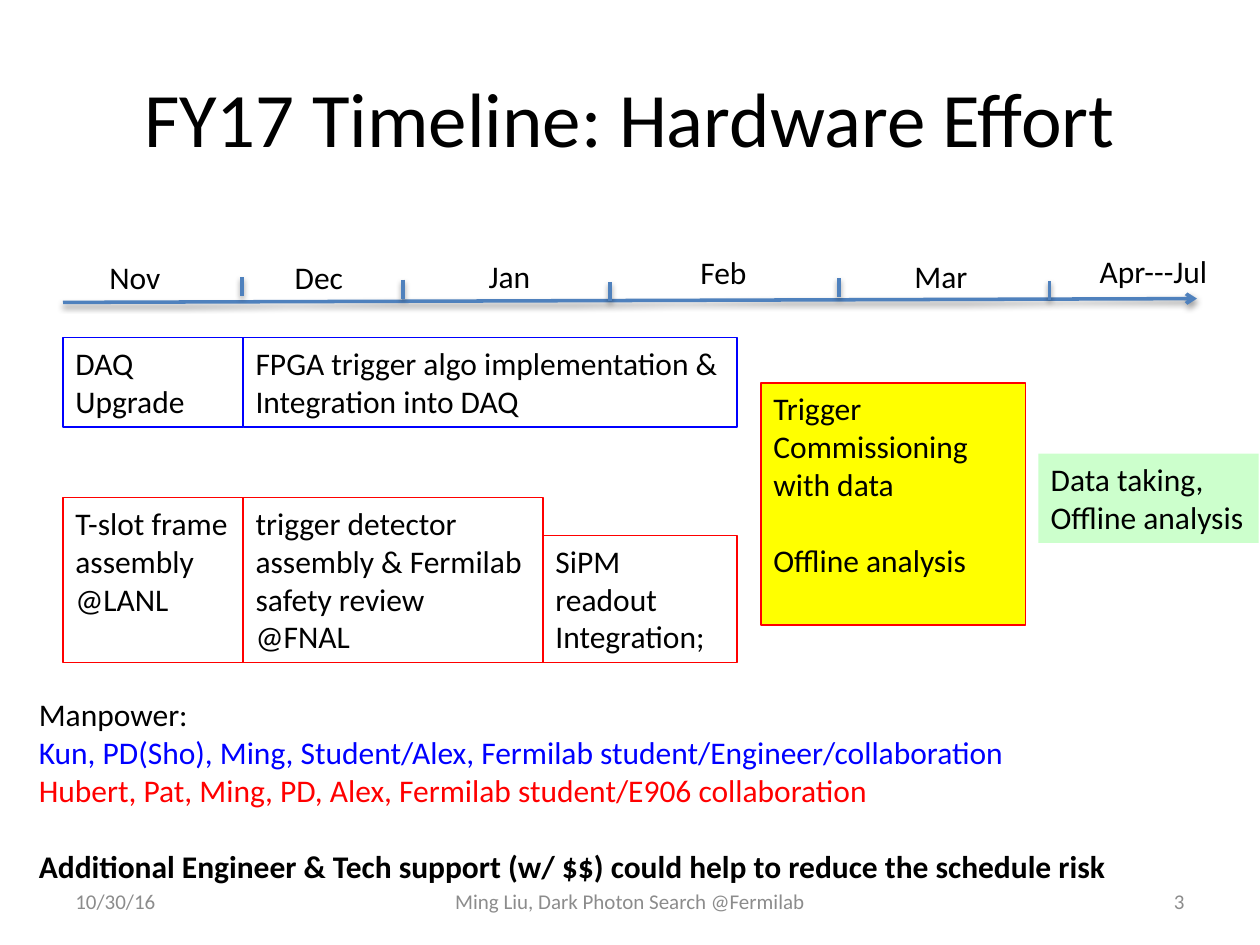
from lxml import etree
from pptx import Presentation
from pptx.dml.color import RGBColor
from pptx.enum.shapes import MSO_CONNECTOR as Link, MSO_SHAPE as Shape
from pptx.enum.text import MSO_ANCHOR as Anchor, PP_ALIGN as Align
from pptx.oxml import parse_xml
from pptx.oxml.ns import nsdecls, qn
from pptx.util import Inches, Pt

BLACK = RGBColor(0x00, 0x00, 0x00)
BLUE = RGBColor(0x00, 0x00, 0xFF)
RED = RGBColor(0xFF, 0x00, 0x00)
YELLOW = RGBColor(0xFF, 0xFF, 0x00)
GREEN = RGBColor(0xCC, 0xFF, 0xCC)
STEEL = RGBColor(0x4F, 0x81, 0xBD)
GREY = RGBColor(0x8C, 0x8C, 0x8C)
FONT = "Calibri"
GAP = Pt(22)  # one line of body text

SHADOW = (
    f'<a:effectLst {nsdecls("a")}>'
    '<a:outerShdw blurRad="40000" dist="20000" dir="5400000" rotWithShape="0">'
    '<a:srgbClr val="000000"><a:alpha val="38000"/></a:srgbClr>'
    '</a:outerShdw></a:effectLst>'
)


def write(shape, lines, size=18, color=BLACK, align=Align.LEFT,
          anchor=Anchor.TOP, wrap=True):
    """Fill a shape with lines: plain text, or (text, options) pairs."""
    frame = shape.text_frame
    frame.word_wrap = wrap
    frame.vertical_anchor = anchor
    for i, line in enumerate(lines):
        text, opts = (line, {}) if isinstance(line, str) else line
        para = frame.paragraphs[0] if i == 0 else frame.add_paragraph()
        para.alignment = align
        para.space_before = opts.get("gap", Pt(0))
        run = para.add_run()
        run.text = text
        font = run.font
        font.name, font.size = FONT, Pt(size)
        font.bold = opts.get("bold", False)
        font.color.rgb = opts.get("color", color)


def add_text(slide, box, lines, **style):
    label = slide.shapes.add_textbox(*map(Inches, box))
    write(label, lines, **style)


def add_task(slide, box, lines, fill=None, edge=None, wrap=True):
    task = slide.shapes.add_shape(Shape.RECTANGLE, *map(Inches, box))
    task.shadow.inherit = False
    if fill is None:
        task.fill.background()
    else:
        task.fill.solid()
        task.fill.fore_color.rgb = fill
    if edge is None:
        task.line.fill.background()
    else:
        task.line.color.rgb = edge
        task.line.width = Pt(0.75)
    write(task, lines, wrap=wrap)


def add_line(slide, start, end, arrow=False):
    line = slide.shapes.add_connector(
        Link.STRAIGHT, *map(Inches, (*start, *end)))
    line.line.color.rgb = STEEL
    line.line.width = Pt(2)
    if arrow:
        etree.SubElement(line.line._get_or_add_ln(), qn("a:tailEnd"), type="arrow")
    line._element.spPr.append(parse_xml(SHADOW))


def add_axis(slide, box):
    """Draw the month axis with its ticks and labels."""
    left, top, width, height = box
    add_line(slide, (left, top + height), (left + width, top + height - 0.03),
             arrow=True)
    months = [("Nov", 0.27, 0.05, 0.61), ("Dec", 1.74, 0.05, 0.59),
              ("Jan", 3.28, 0.04, 0.54), ("Feb", 4.96, 0.01, 0.58),
              ("Mar", 6.66, 0.04, 0.63), ("Apr---Jul", 8.13, 0, 1.07)]
    for name, x, y, wide in months:
        add_text(slide, (left + x, top + y, wide, 0.4), [name], wrap=False)
    ticks = [(1.42, 0.25), (2.7, 0.27), (4.34, 0.29), (6.16, 0.26), (7.83, 0.28)]
    for x, y in ticks:
        add_line(slide, (left + x, top + y), (left + x, top + y + 0.15))


def add_track(slide, box, edge, tasks):
    """Set tasks (width, height, lines) side by side on a common bottom."""
    left, top, height = box
    for wide, tall, lines in tasks:
        add_task(slide, (left, top + height - tall, wide, tall), lines, edge=edge)
        left += wide


def add_footer(slide, box):
    left, top, width, height = box
    side, mid = 2.33, 3.17
    parts = [("10/30/16", 0, side, Align.LEFT),
             ("Ming Liu, Dark Photon Search @Fermilab", (width - mid) / 2, mid,
              Align.CENTER),
             ("3", width - side, side, Align.RIGHT)]
    for text, x, wide, align in parts:
        add_text(slide, (left + x, top, wide, height), [text], size=12,
                 color=GREY, align=align, anchor=Anchor.MIDDLE)


def main():
    deck = Presentation()
    deck.slide_width, deck.slide_height = Inches(10), Inches(7.5)
    slide = deck.slides.add_slide(deck.slide_layouts[6])

    add_text(slide, (0.5, 0.3, 9, 1.25), ["FY17 Timeline: Hardware Effort"],
             size=44, align=Align.CENTER, anchor=Anchor.MIDDLE)
    add_track(slide, (0.5, 2.68, 0.71), BLUE, [
        (1.43, 0.71, ["DAQ", "Upgrade"]),
        (3.92, 0.71, ["FPGA trigger algo implementation & Integration into DAQ"]),
    ])
    add_track(slide, (0.5, 3.95, 1.31), RED, [
        (1.43, 1.31, ["T-slot frame assembly", "@LANL"]),
        (2.38, 1.31, ["trigger detector assembly & Fermilab safety review",
                      "@FNAL"]),
        (1.54, 1.01, ["SiPM readout", "Integration;"]),
    ])
    add_task(slide, (6.04, 3.04, 2.1, 1.92),
             ["Trigger", "Commissioning with data",
              ("Offline analysis", {"gap": GAP})], fill=YELLOW, edge=RED)
    add_task(slide, (8.24, 3.6, 1.75, 0.71),
             ["Data taking,", "Offline analysis"], fill=GREEN, wrap=False)
    add_text(slide, (0.21, 5.47, 8.99, 1.62), [
        "Manpower:",
        ("Kun, PD(Sho), Ming, Student/Alex, "
         "Fermilab student/Engineer/collaboration", {"color": BLUE}),
        ("Hubert, Pat, Ming, PD, Alex, Fermilab student/E906 collaboration",
         {"color": RED}),
        ("Additional Engineer & Tech support (w/ $$) could help to reduce "
         "the schedule risk", {"bold": True, "gap": GAP}),
    ], wrap=False)
    add_axis(slide, (0.5, 1.95, 9, 0.45))
    add_footer(slide, (0.5, 6.95, 9, 0.4))
    deck.save("out.pptx")


if __name__ == "__main__":
    main()
